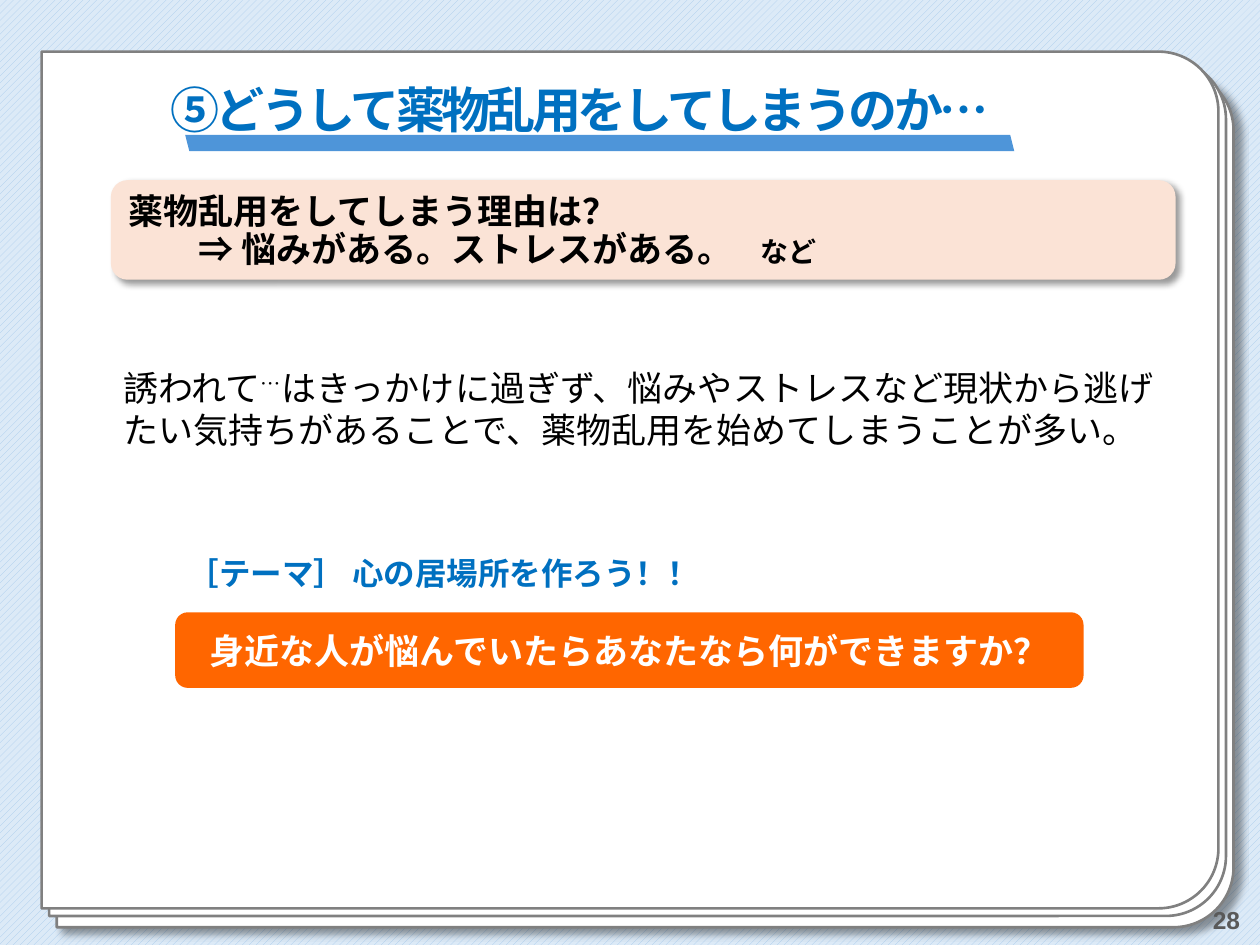
from lxml import etree
from pptx import Presentation
from pptx import util as u
from pptx.dml.color import RGBColor
from pptx.enum import dml, shapes, text
from pptx.oxml.ns import qn

Inches = u.Inches
SHAPE = shapes.MSO_SHAPE
ALIGN = text.PP_ALIGN
JP = "Noto Sans CJK JP"


def color(hex_code):
    return RGBColor.from_string(hex_code)


def add_shadow(sp, dist):
    """Soft black shadow to the lower right."""
    effects = sp._element.spPr.find(qn("a:effectLst"))
    shadow = etree.SubElement(effects, qn("a:outerShdw"), blurRad=str(u.Pt(4)),
                              dist=str(u.Pt(dist)), dir="2700000",
                              algn="tl", rotWithShape="0")
    black = etree.SubElement(shadow, qn("a:srgbClr"), val="000000")
    etree.SubElement(black, qn("a:alpha"), val="40000")


def add_panel(s, kind, box, fill, line=None, shadow=None):
    sp = s.shapes.add_shape(kind, *map(Inches, box))
    sp.shadow.inherit = False
    sp.fill.solid()
    sp.fill.fore_color.rgb = color(fill)
    if line:
        sp.line.color.rgb = color(line)
        sp.line.width = u.Pt(1.5)
    else:
        sp.line.fill.background()
    if shadow:
        add_shadow(sp, shadow)
    return sp


def add_label(s, box):
    return s.shapes.add_textbox(*map(Inches, box))


def set_frame(sp, insets=(0.1, 0.1, 0.1, 0.1), anchor="TOP", wrap=True):
    tf = sp.text_frame
    tf.word_wrap = wrap
    tf.vertical_anchor = getattr(text.MSO_ANCHOR, anchor)
    tf.margin_left, tf.margin_top, tf.margin_right, tf.margin_bottom = map(Inches, insets)
    return tf


def add_run(p, words, size, hex_code, bold=False, font="Arial"):
    r = p.add_run()
    r.text = words
    r.font.size = u.Pt(size)
    r.font.bold = bold
    r.font.name = font
    r.font.color.rgb = color(hex_code)
    etree.SubElement(r._r.get_or_add_rPr(), qn("a:ea"), typeface=JP)
    return r


def add_paper_stack(s, x, y, w, h):
    """Three sheets, each turned so that its round corners face right."""
    for dx, dy, shadow in ((0.12, 0.15, 5), (0.06, 0.06, None), (0, 0, None)):
        left, top = x + dx + (w - h) / 2, y + dy + (h - w) / 2
        sp = add_panel(s, SHAPE.ROUND_2_SAME_RECTANGLE, (left, top, h, w),
                       "FFFFFF", "808080", shadow)
        sp.adjustments[0], sp.adjustments[1] = 0.07, 0
        sp.rotation = 90


def add_page_number(s, *box):
    p = set_frame(add_label(s, box), (0.1, 0.05, 0.1, 0.05), "MIDDLE").paragraphs[0]
    p.alignment = ALIGN.RIGHT
    add_run(p, "28", 14, "595959", True)


def add_title(s, *box):
    p = set_frame(add_label(s, box), (0.1, 0.05, 0.1, 0.05), "MIDDLE").paragraphs[0]
    p.alignment, p.line_spacing = ALIGN.CENTER, 0.9
    r = add_run(p, "⑤どうして薬物乱用をしてしまうのか…　", 28, "0070C0", True, JP)
    r._r.get_or_add_rPr().set("spc", "-200")


def add_reason(s, *box):
    sp = add_panel(s, SHAPE.ROUNDED_RECTANGLE, box, "FBE3D6", shadow=3)
    tf = set_frame(sp, (0.1, 0.04, 0.1, 0), "MIDDLE")
    question, answer = tf.paragraphs[0], tf.add_paragraph()
    for p in (question, answer):
        p.alignment, p.line_spacing = ALIGN.LEFT, 0.9
    answer._p.get_or_add_pPr().set("marL", str(Inches(0.56)))
    add_run(question, "薬物乱用をしてしまう理由は？", 20, "000000", True)
    add_run(answer, "⇒ 悩みがある。ストレスがある。", 20, "000000", True)
    add_run(answer, "　など", 16, "000000", True)


def add_explanation(s, *box):
    p = set_frame(add_label(s, box)).paragraphs[0]
    add_run(p, "誘われて", 20, "000000")
    dots = add_run(p, "…", 20, "000000")
    dots._r.get_or_add_rPr().set("baseline", "30000")
    add_run(p, "はきっかけに過ぎず、悩みやストレスなど現状から逃げたい気持ちがあることで、"
               "薬物乱用を始めてしまうことが多い。", 20, "000000")


def add_theme(s, x, y, w, h):
    """Theme heading with the question banner below it."""
    banner_h = 0.6
    banner = add_panel(s, SHAPE.ROUNDED_RECTANGLE,
                       (x, y + h - banner_h, w, banner_h), "FF6600")
    p = set_frame(banner, anchor="MIDDLE", wrap=False).paragraphs[0]
    p.alignment = ALIGN.CENTER
    add_run(p, "身近な人が悩んでいたらあなたなら何ができますか？", 20, "FFFFFF", True)
    p = set_frame(add_label(s, (x, y, w, 0.5))).paragraphs[0]
    add_run(p, "［テーマ］ 心の居場所を作ろう！！", 18, "0070C0", True)


def add_underline(s, *box):
    sp = add_panel(s, SHAPE.PARALLELOGRAM, box, "4E95D9")
    sp._element.spPr.find(qn("a:xfrm")).set("flipH", "1")


def main():
    prs = Presentation()
    prs.slide_width, prs.slide_height = Inches(10), Inches(7.5)
    s = prs.slides.add_slide(prs.slide_layouts[6])

    # Striped background
    fill = s.background.fill
    fill.patterned()
    fill.pattern = dml.MSO_PATTERN.WIDE_UPWARD_DIAGONAL
    fill.fore_color.rgb, fill.back_color.rgb = color("A6CAEC"), color("DCEAF7")

    # Frame
    add_paper_stack(s, 0.33, 0.41, 9.34, 6.8)
    add_page_number(s, 7.69, 7.1, 2.25, 0.4)

    # Content
    add_title(s, 0.68, 0.35, 8.2, 1.08)
    add_reason(s, 0.88, 1.43, 8.45, 0.79)
    add_explanation(s, 0.88, 2.81, 8.45, 0.88)
    add_theme(s, 1.39, 4.3, 7.21, 1.16)
    add_underline(s, 1.47, 1.07, 6.58, 0.13)

    prs.save("out.pptx")


if __name__ == "__main__":
    main()
